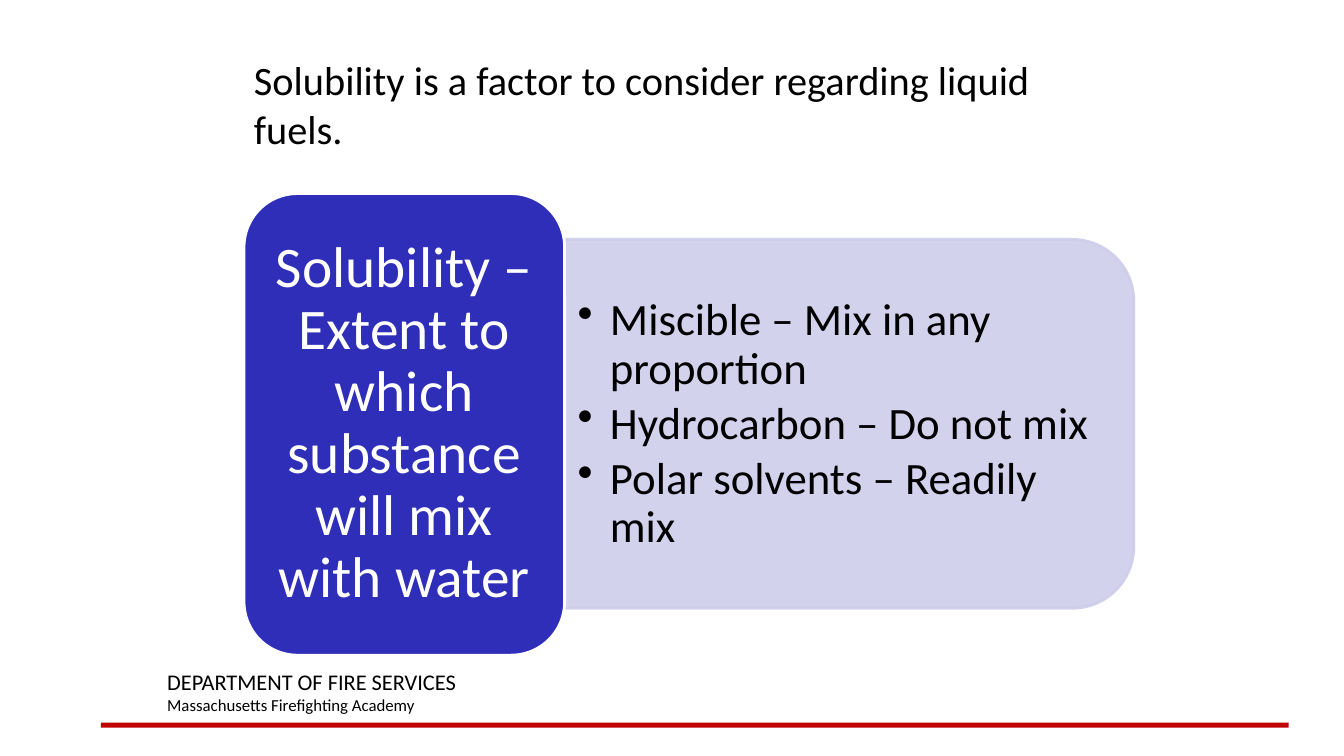
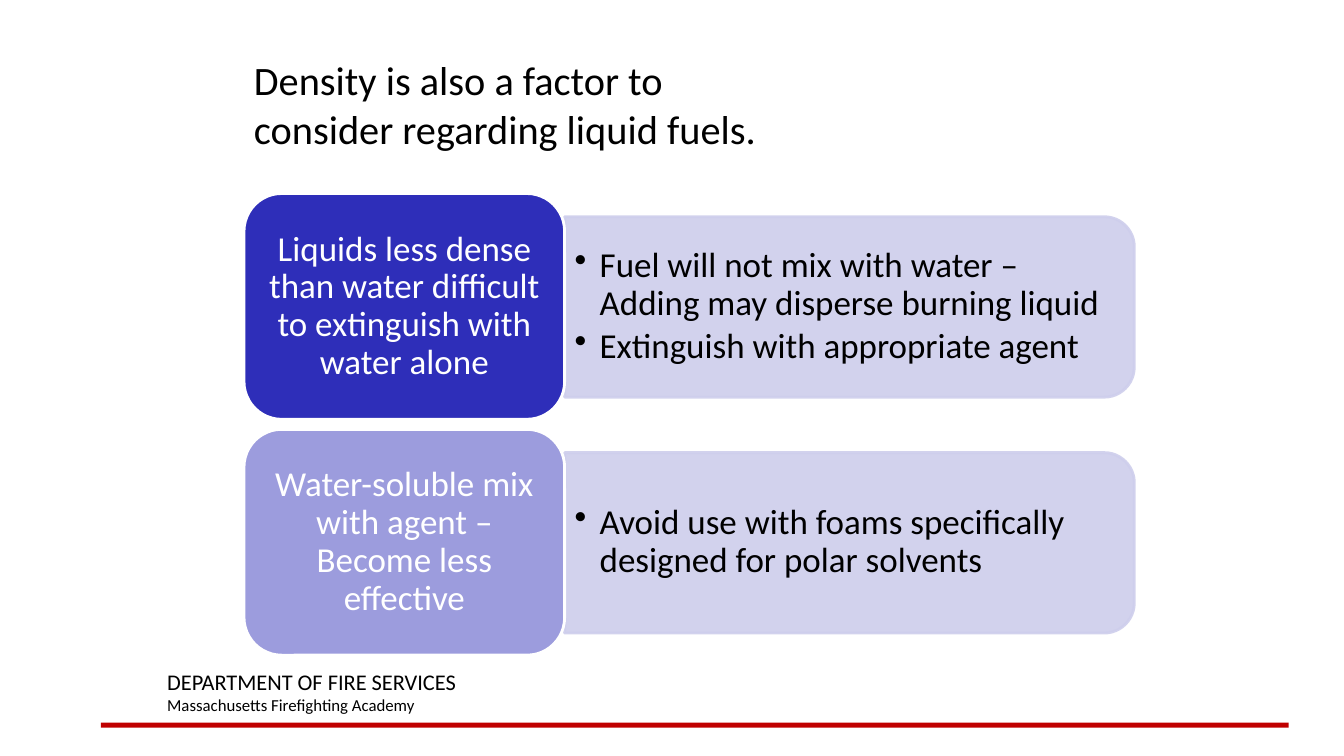
from lxml import etree
from pptx import Presentation
from pptx import util as u
from pptx.dml.color import RGBColor
from pptx.enum import shapes, text
from pptx.oxml.ns import qn

SCALE = 9144  # EMU per px, 100 px to the inch
FONT = "Calibri"
BLACK, WHITE, RED = "000000", "FFFFFF", "C00000"
BLUE, LILAC, PALE = "2E2EB9", "9C9CDD", "CECEEC"
LEFT, HEAD_W, BAND_W = 242, 318, 565
TOP, TOTAL, GAP = 192, 458, 10
KIND = shapes.MSO_SHAPE


def px(n):
    return u.Emu(round(n) * SCALE)


def color(hexa):
    return RGBColor.from_string(hexa)


def put(obj, values):
    for name, value in values.items():
        setattr(obj, name, value)


class Deck:
    def __init__(self):
        self.prs = Presentation()
        put(self.prs, {"slide_width": px(1333), "slide_height": px(750)})
        self.slide = None

    def page(self, title):
        """Start a slide with its footer, rule and title."""
        self.slide = self.prs.slides.add_slide(self.prs.slide_layouts[6])
        self.shape(KIND.RECTANGLE, (100, 717, 1178, 5), RED)
        foot = self.box((156, 658, 567, 57))
        self.para(foot, ["DEPARTMENT OF FIRE SERVICES"], 16)
        self.para(foot, ["Massachusetts Firefighting Academy"], 12)
        self.para(self.box((LEFT, 50, 858, 100)), title, 28.8)

    def shape(self, kind, at, fill, line=None, alpha=None):
        form = self.slide.shapes.add_shape(kind, *map(px, at))
        form.shadow.inherit = False
        form.fill.solid()
        form.fill.fore_color.rgb = color(fill)
        if line:
            form.line.color.rgb = color(line)
            form.line.width = u.Pt(2)
        else:
            form.line.fill.background()
        if alpha:
            for tint in form._element.spPr.iter(qn("a:srgbClr")):
                etree.SubElement(tint, qn("a:alpha"), val=str(alpha * 1000))
        return form

    def frame(self, form, pad, anchor):
        side, edge = px(pad), px(pad / 2)
        put(form.text_frame, {
            "word_wrap": True, "vertical_anchor": anchor,
            "margin_left": side, "margin_right": side,
            "margin_top": edge, "margin_bottom": edge})
        return form.text_frame

    def box(self, at, pad=10, anchor=text.MSO_ANCHOR.TOP):
        form = self.slide.shapes.add_textbox(*map(px, at))
        return self.frame(form, pad, anchor)

    def para(self, frame, lines, size, ink=BLACK, bullet=False, **form):
        """Fill the empty first paragraph, or add another."""
        first = not frame.paragraphs[0].runs
        par = frame.paragraphs[0] if first else frame.add_paragraph()
        put(par, {"alignment": text.PP_ALIGN.LEFT, **form})
        if bullet:
            if not first:
                par.space_before = u.Pt(round(size * 0.15, 1))
            props = par._p.get_or_add_pPr()
            props.set("marL", str(px(size)))
            props.set("indent", str(-px(size)))
            etree.SubElement(props, qn("a:buChar"), char="•")
        for i, line in enumerate(lines):
            if i:
                par.add_line_break()
            run = par.add_run()
            run.text = line
            put(run.font, {"size": u.Pt(size), "name": FONT})
            run.font.color.rgb = color(ink)

    def row(self, top, high, head, points, fill, sizes):
        """A heading block with a band of bullets to its right."""
        big, small = sizes
        mid = top + high / 2
        left, deep = LEFT + HEAD_W, high * 0.8
        middle = text.MSO_ANCHOR.MIDDLE
        # Band, turned so that its round corners face right
        band = self.shape(KIND.ROUND_2_SAME_RECTANGLE,
                          (left + (BAND_W - deep) / 2, mid - BAND_W / 2,
                           deep, BAND_W), PALE, PALE, 90)
        band.rotation = 90
        # Bullets, kept clear of the round corners
        trim = deep / 6 * 0.29
        frame = self.box((left, mid - deep / 2 + trim,
                          BAND_W - trim, deep - 2 * trim),
                         small * 0.4, middle)
        for point in points:
            self.para(frame, [point], small, bullet=True, line_spacing=0.9)
        # Heading
        block = self.shape(KIND.ROUNDED_RECTANGLE,
                           (LEFT, top, HEAD_W, high), fill, WHITE)
        self.para(self.frame(block, big * 0.4, middle), [head], big, WHITE,
                  alignment=text.PP_ALIGN.CENTER, line_spacing=0.9)

    def rows(self, items, sizes):
        """Share the height equally among the rows."""
        high = (TOTAL - GAP * (len(items) - 1)) / len(items)
        for i, item in enumerate(items):
            self.row(TOP + i * (high + GAP), high, *item, sizes)


def main():
    deck = Deck()

    # Solubility
    deck.page(["Solubility is a factor to consider regarding liquid fuels."])
    deck.rows([
        ("Solubility – Extent to which substance will mix with water",
         ["Miscible – Mix in any proportion", "Hydrocarbon – Do not mix",
          "Polar solvents – Readily mix"], BLUE),
    ], (41, 32))

    # Density
    deck.page(["Density is also a factor to",
               "consider regarding liquid fuels."])
    deck.rows([
        ("Liquids less dense than water difficult to extinguish with "
         "water alone",
         ["Fuel will not mix with water – Adding may disperse burning liquid",
          "Extinguish with appropriate agent"], BLUE),
        ("Water-soluble mix with agent – Become less effective",
         ["Avoid use with foams specifically designed for polar solvents"],
         LILAC),
    ], (25, 25))

    deck.prs.save("out.pptx")


if __name__ == "__main__":
    main()
